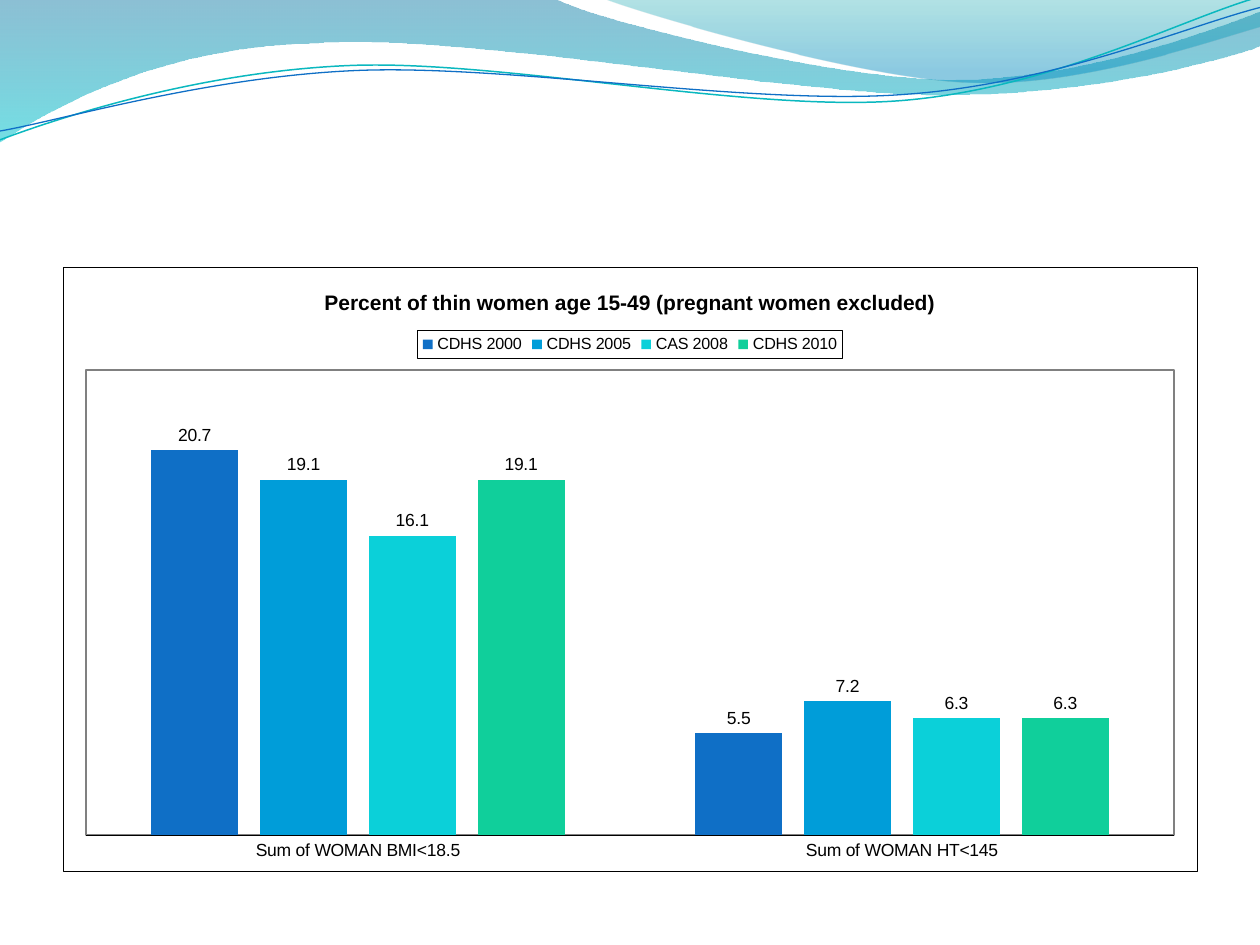
from dataclasses import dataclass
from math import cos, radians, sin
from typing import Optional

from pptx import Presentation
from pptx.chart.data import CategoryChartData
from pptx.dml.color import RGBColor
from pptx.enum.chart import XL_CHART_TYPE as ChartType, XL_LABEL_POSITION as LabelPos
from pptx.enum.chart import XL_LEGEND_POSITION as LegendPos, XL_TICK_MARK as TickMark
from pptx.oxml import parse_xml
from pptx.oxml.ns import nsdecls
from pptx.util import Inches, Pt

COLUMNS, ROWS = 20, 15
CELL = Inches(0.5)
TILT = 357.3
FONT = "Arial"
BLACK, WHITE, GREY = "000000", "FFFFFF", "808080"


@dataclass
class Stop:
    position: int
    colour: str
    opacity: int


@dataclass
class Wave:
    """Outline in inches: two numbers are a line end, six a Bezier segment."""
    start: tuple
    segments: list
    gradient: Optional[list] = None
    stroke: Optional[tuple] = None
    centre: tuple = (0, 0)
    tilt: float = 0


@dataclass
class Survey:
    name: str
    percents: tuple
    colour: str


BANDS = [
    Wave((0, 0), [
        (4.4, -0.01), (4.76, 0.17, 6.64, 0.63, 7.58, 0.63),
        (8.53, 0.63, 9.58, 0.26, 10, 0.09), (10.01, 0.36),
        (9.83, 0.44, 8.7, 0.76, 7.46, 0.75), (6.22, 0.75, 3.82, 0.28, 2.57, 0.34),
        (1.29, 0.36, 0.46, 0.83, -0.01, 1.13), (0, 0)],
        gradient=[Stop(0, "0074A1", 45), Stop(100, "00C6CF", 55)]),
    Wave((4.79, -0.01), [
        (5.09, 0.11, 6.82, 0.62, 7.69, 0.65), (8.56, 0.69, 9.61, 0.32, 10, 0.21),
        (10, 0), (4.79, -0.01)],
        gradient=[Stop(0, "00A1A9", 30), Stop(80, "008BBF", 45)]),
]
STRANDS = [
    Wave((0, 1.11), [
        (0.48, 0.93, 1.58, 0.57, 2.77, 0.52), (3.95, 0.47, 5.93, 0.89, 7.13, 0.8),
        (8.33, 0.71, 9.38, 0.15, 9.98, -0.02)],
        stroke=("0AB8BF", 0.85), centre=(4.99, 0.57), tilt=TILT),
    Wave((0, 1.04), [
        (0.47, 0.96, 1.64, 0.61, 2.83, 0.56), (4.03, 0.51, 5.97, 0.84, 7.17, 0.75),
        (8.36, 0.67, 9.41, 0.21, 10, 0.06)],
        stroke=("0F6FC6", 0.75), centre=(5, 0.59), tilt=TILT),
]
INDICATORS = ["Sum of WOMAN BMI<18.5", "Sum of WOMAN HT<145"]
SURVEYS = [
    Survey("CDHS 2000", (20.7, 5.5), "0F6FC6"),
    Survey("CDHS 2005", (19.1, 7.2), "009DD9"),
    Survey("CAS 2008", (16.1, 6.3), "0BD0D9"),
    Survey("CDHS 2010", (19.1, 6.3), "10CF9B"),
]


def rgb(colour: str) -> RGBColor:
    return RGBColor.from_string(colour)


def set_values(target, **values) -> None:
    for name, value in values.items():
        setattr(target, name, value)


def set_font(font, size: float, bold: bool = False) -> None:
    set_values(font, name=FONT, size=Pt(size), bold=bold)
    font.color.rgb = rgb(BLACK)


def level_point(wave: Wave, x: float, y: float) -> tuple:
    """Turn a point back by the wave's tilt, which the shape's rotation restores."""
    angle = radians(-wave.tilt)
    dx, dy = x - wave.centre[0], y - wave.centre[1]
    return (Inches(wave.centre[0] + dx * cos(angle) - dy * sin(angle)),
            Inches(wave.centre[1] + dx * sin(angle) + dy * cos(angle)))


def bend_segments(shape, segments: list) -> None:
    """Merge the three lines of each Bezier segment into one curve."""
    lines = iter(shape.element.xpath(".//a:lnTo"))
    for segment in segments:
        first = next(lines)
        if len(segment) == 6:
            curve = parse_xml(f'<a:cubicBezTo {nsdecls("a")}/>')
            first.addprevious(curve)
            for line in (first, next(lines), next(lines)):
                curve.append(line[0])
                line.getparent().remove(line)


def vertical_gradient(stops: list):
    stop_xml = "".join(
        f'<a:gs pos="{s.position * 1000}"><a:srgbClr val="{s.colour}">'
        f'<a:alpha val="{s.opacity * 1000}"/></a:srgbClr></a:gs>' for s in stops)
    return parse_xml(f'<a:gradFill {nsdecls("a")}><a:gsLst>{stop_xml}</a:gsLst>'
                     '<a:lin ang="5400000" scaled="0"/></a:gradFill>')


def draw_wave(shapes, wave: Wave) -> None:
    points = [wave.start] + [segment[i:i + 2] for segment in wave.segments
                             for i in range(0, len(segment), 2)]
    nodes = [level_point(wave, *point) for point in points]
    builder = shapes.build_freeform(*nodes[0])
    builder.add_line_segments(nodes[1:], close=wave.gradient is not None)
    shape = builder.convert_to_shape()
    bend_segments(shape, wave.segments)
    shape.rotation = wave.tilt
    shape.shadow.inherit = False
    shape.fill.background()
    if wave.gradient:
        shape.line.fill.background()
        no_fill = shape.element.xpath("p:spPr/a:noFill")[0]
        no_fill.getparent().replace(no_fill, vertical_gradient(wave.gradient))
    else:
        colour, width = wave.stroke
        shape.line.color.rgb = rgb(colour)
        shape.line.width = Pt(width)


def framed(colour: str, width: float):
    """White area with an outline, for a part of the chart."""
    return parse_xml(
        f'<c:spPr {nsdecls("c", "a")}><a:solidFill><a:srgbClr val="{WHITE}"/></a:solidFill>'
        f'<a:ln w="{Pt(width)}"><a:solidFill><a:srgbClr val="{colour}"/></a:solidFill></a:ln>'
        '</c:spPr>')


def inner_layout(x: float, y: float, w: float, h: float):
    box = "".join(f'<c:{k} val="{v}"/>' for k, v in zip("xywh", (x, y, w, h)))
    return parse_xml(
        f'<c:layout {nsdecls("c")}><c:manualLayout><c:layoutTarget val="inner"/>'
        f'<c:xMode val="edge"/><c:yMode val="edge"/>{box}</c:manualLayout></c:layout>')


def frame_chart_parts(chart) -> None:
    space = chart.element
    space.xpath("c:chart")[0].addnext(framed(BLACK, 0.25))
    plot_area = space.xpath("c:chart/c:plotArea")[0]
    for automatic in plot_area.xpath("c:layout"):
        plot_area.remove(automatic)
    plot_area.insert(0, inner_layout(0.02, 0.17, 0.96, 0.77))
    plot_area.append(framed(GREY, 1))
    space.xpath("c:chart/c:legend/c:txPr")[0].addprevious(framed(BLACK, 0.25))


def draw_survey_chart(slide) -> None:
    data = CategoryChartData(number_format="0.0")
    data.categories = INDICATORS
    for survey in SURVEYS:
        data.add_series(survey.name, survey.percents)
    chart = slide.shapes.add_chart(ChartType.COLUMN_CLUSTERED, CELL, int(4.24 * CELL),
                                   (COLUMNS - 2) * CELL, int(9.6 * CELL), data).chart
    set_font(chart.font, 10)

    chart.has_title = True
    title = chart.chart_title.text_frame
    title.text = "Percent of thin women age 15-49 (pregnant women excluded)"
    set_font(title.paragraphs[0].runs[0].font, 12, bold=True)

    chart.has_legend = True
    set_values(chart.legend, position=LegendPos.TOP, include_in_layout=False)
    set_font(chart.legend.font, 9.2)

    set_values(chart.value_axis, visible=False, has_major_gridlines=False,
               minimum_scale=0, maximum_scale=25)
    category_axis = chart.category_axis
    set_values(category_axis, major_tick_mark=TickMark.NONE, minor_tick_mark=TickMark.NONE)
    category_axis.format.line.color.rgb = rgb(BLACK)
    category_axis.format.line.width = Pt(0.25)

    plot = chart.plots[0]
    set_values(plot, gap_width=150, overlap=-25, vary_by_categories=False)
    for series, survey in zip(plot.series, SURVEYS):
        series.format.fill.solid()
        series.format.fill.fore_color.rgb = rgb(survey.colour)
        set_values(series.data_labels, show_value=True, position=LabelPos.OUTSIDE_END)
        set_font(series.data_labels.font, 10)
    frame_chart_parts(chart)


def main() -> None:
    deck = Presentation()
    set_values(deck, slide_width=COLUMNS * CELL, slide_height=ROWS * CELL)
    slide = deck.slides.add_slide(deck.slide_layouts[6])
    for band in BANDS:
        draw_wave(slide.shapes, band)
    strand_group = slide.shapes.add_group_shape()
    for strand in STRANDS:
        draw_wave(strand_group.shapes, strand)
    draw_survey_chart(slide)
    deck.save("out.pptx")


if __name__ == "__main__":
    main()
